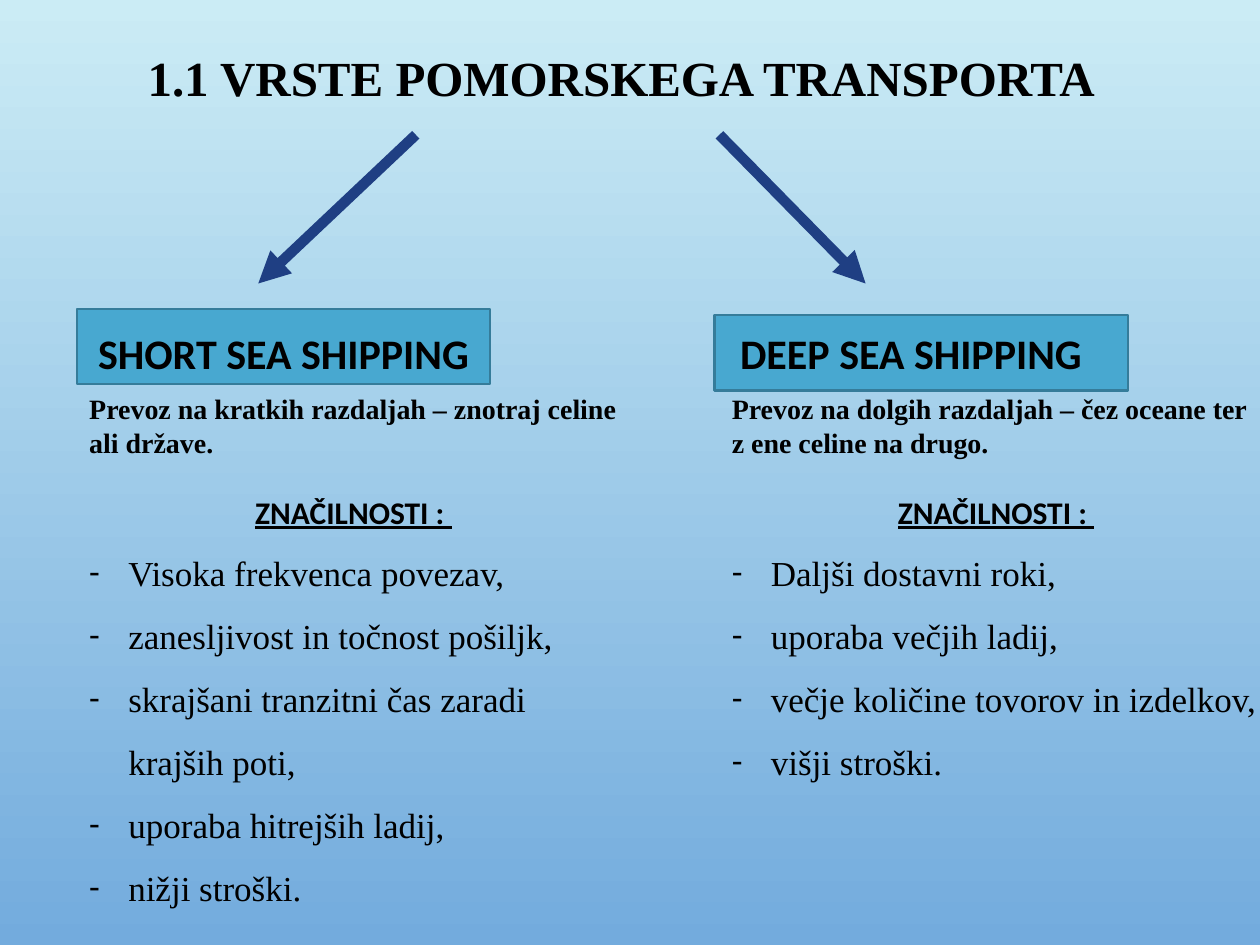
from lxml import etree
from pptx import Presentation
from pptx.dml.color import RGBColor
from pptx.enum.shapes import MSO_CONNECTOR, MSO_SHAPE
from pptx.enum.text import MSO_ANCHOR, PP_ALIGN
from pptx.oxml.ns import qn
from pptx.util import Inches, Pt

STRAIGHT = MSO_CONNECTOR.STRAIGHT
RECTANGLE = MSO_SHAPE.RECTANGLE
MIDDLE = MSO_ANCHOR.MIDDLE
TOP = MSO_ANCHOR.TOP
CENTER = PP_ALIGN.CENTER
LEFT = PP_ALIGN.LEFT

SKY_TOP = RGBColor(0xCB, 0xEC, 0xF5)
SKY_BOTTOM = RGBColor(0x73, 0xAB, 0xDD)
LABEL_FILL = RGBColor(0x48, 0xA8, 0xD0)
LABEL_LINE = RGBColor(0x35, 0x7C, 0x9A)
ARROW_BLUE = RGBColor(0x1F, 0x3F, 0x83)
BLACK = RGBColor(0, 0, 0)

SERIF = "Times New Roman"
SANS = "Calibri"


def add_text_box(left, top, width, height, anchor=TOP):
    shape = slide.shapes.add_textbox(Inches(left), Inches(top), Inches(width), Inches(height))
    shape.text_frame.word_wrap = True
    shape.text_frame.vertical_anchor = anchor
    return shape.text_frame


def write(paragraph, text, font_name, size, bold=True, underline=False, alignment=LEFT):
    paragraph.text = text
    paragraph.alignment = alignment
    font = paragraph.runs[0].font
    font.name = font_name
    font.size = Pt(size)
    font.bold = bold
    font.underline = underline
    font.color.rgb = BLACK


presentation = Presentation()
presentation.slide_width = Inches(10)
presentation.slide_height = Inches(7.5)
slide = presentation.slides.add_slide(presentation.slide_layouts[6])

background = slide.background.fill
background.gradient()
background.gradient_angle = 270
for stop, color in zip(background.gradient_stops, (SKY_TOP, SKY_BOTTOM)):
    stop.color.rgb = color

title_frame = add_text_box(0.61, 0.12, 8.64, 1.04, MIDDLE)
write(title_frame.paragraphs[0], "1.1 VRSTE POMORSKEGA TRANSPORTA", SERIF, 28, alignment=CENTER)
title_frame.paragraphs[0].line_spacing = 0.9

columns = [
    {
        "label": "SHORT SEA SHIPPING",
        "label_left": 0.61, "label_top": 2.45, "label_text_width": 3.28,
        "arrow_start": 3.3, "arrow_end": 2.05,
        "body_left": 0.61, "body_height": 4.18,
        "summary": "Prevoz na kratkih razdaljah – znotraj celine ali države.",
        "features": [
            "Visoka frekvenca povezav,",
            "zanesljivost in točnost pošiljk,",
            "skrajšani tranzitni čas zaradi krajših poti,",
            "uporaba hitrejših ladij,",
            "nižji stroški.",
        ],
    },
    {
        "label": "DEEP SEA SHIPPING",
        "label_left": 5.67, "label_top": 2.5, "label_text_width": 3.12,
        "arrow_start": 5.71, "arrow_end": 6.87,
        "body_left": 5.71, "body_height": 3.17,
        "summary": "Prevoz na dolgih razdaljah – čez oceane ter z ene celine na drugo.",
        "features": [
            "Daljši dostavni roki,",
            "uporaba večjih ladij,",
            "večje količine tovorov in izdelkov,",
            "višji stroški.",
        ],
    },
]

for column in columns:
    label = slide.shapes.add_shape(
        RECTANGLE, Inches(column["label_left"]), Inches(column["label_top"]), Inches(3.28), Inches(0.6)
    )
    label.shadow.inherit = False
    label.fill.solid()
    label.fill.fore_color.rgb = LABEL_FILL
    label.line.color.rgb = LABEL_LINE
    label.line.width = Pt(1.25)

    arrow = slide.shapes.add_connector(
        STRAIGHT, Inches(column["arrow_start"]), Inches(1.07), Inches(column["arrow_end"]), Inches(2.25)
    )
    arrow.line.color.rgb = ARROW_BLUE
    arrow.line.width = Pt(6)
    etree.SubElement(arrow.line._get_or_add_ln(), qn("a:tailEnd"), type="triangle")
    etree.SubElement(arrow._element.spPr, qn("a:effectLst"))

    label_frame = add_text_box(column["label_left"], 2.55, column["label_text_width"], 0.5)
    write(label_frame.paragraphs[0], column["label"], SANS, 24, alignment=CENTER)

    body_frame = add_text_box(column["body_left"], 3.06, 4.39, column["body_height"])
    write(body_frame.paragraphs[0], column["summary"], SERIF, 16)

    heading = body_frame.add_paragraph()
    write(heading, "ZNAČILNOSTI : ", SANS, 18, underline=True, alignment=CENTER)
    heading.space_before = Pt(19.5)

    for feature in column["features"]:
        paragraph = body_frame.add_paragraph()
        properties = paragraph._p.get_or_add_pPr()
        properties.set("marL", str(Inches(0.31)))
        properties.set("indent", str(-Inches(0.31)))
        etree.SubElement(properties, qn("a:buFont"), typeface=SANS)
        etree.SubElement(properties, qn("a:buChar"), char="-")
        write(paragraph, feature, SERIF, 20, bold=False)
        paragraph.line_spacing = 1.5

presentation.save("out.pptx")
